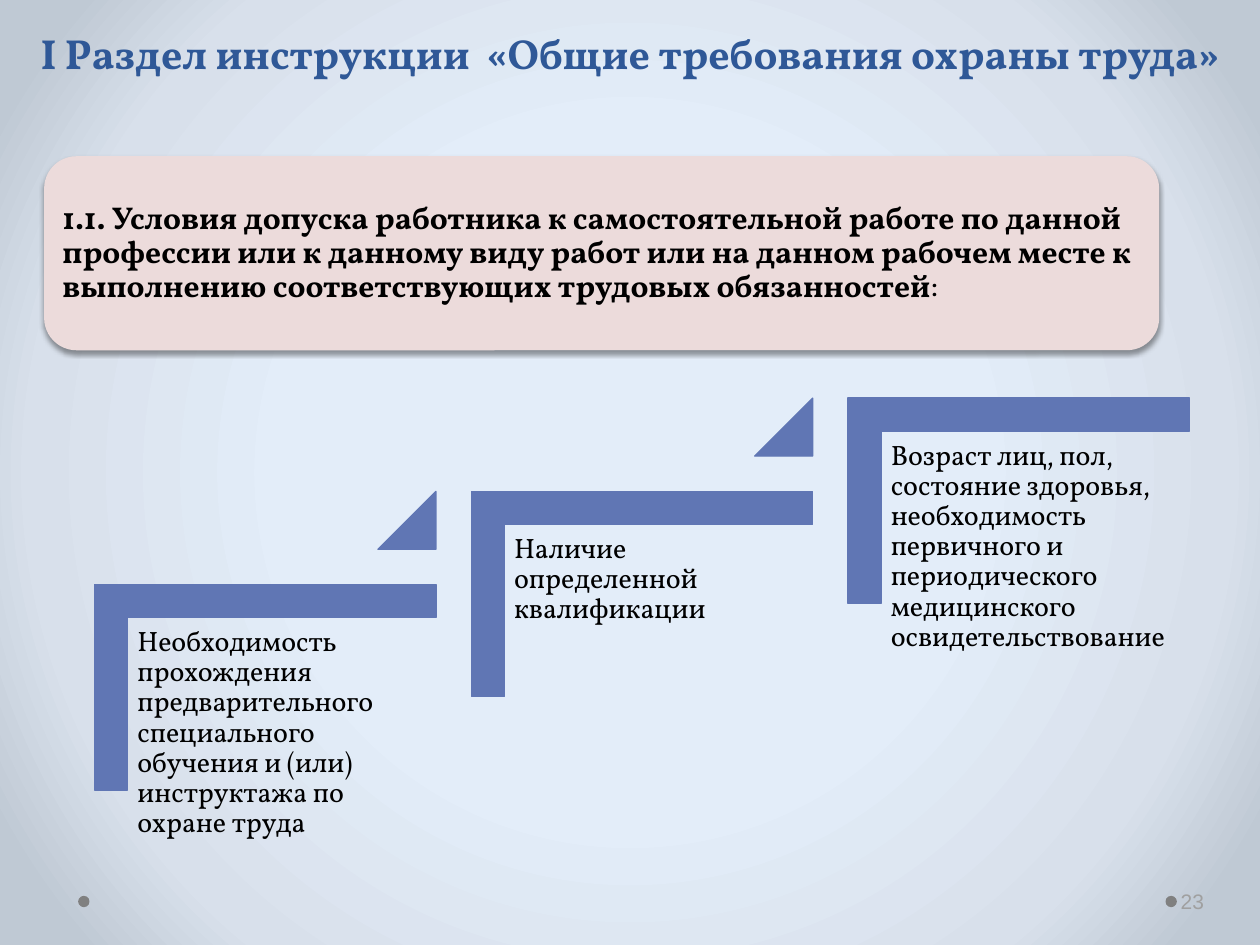
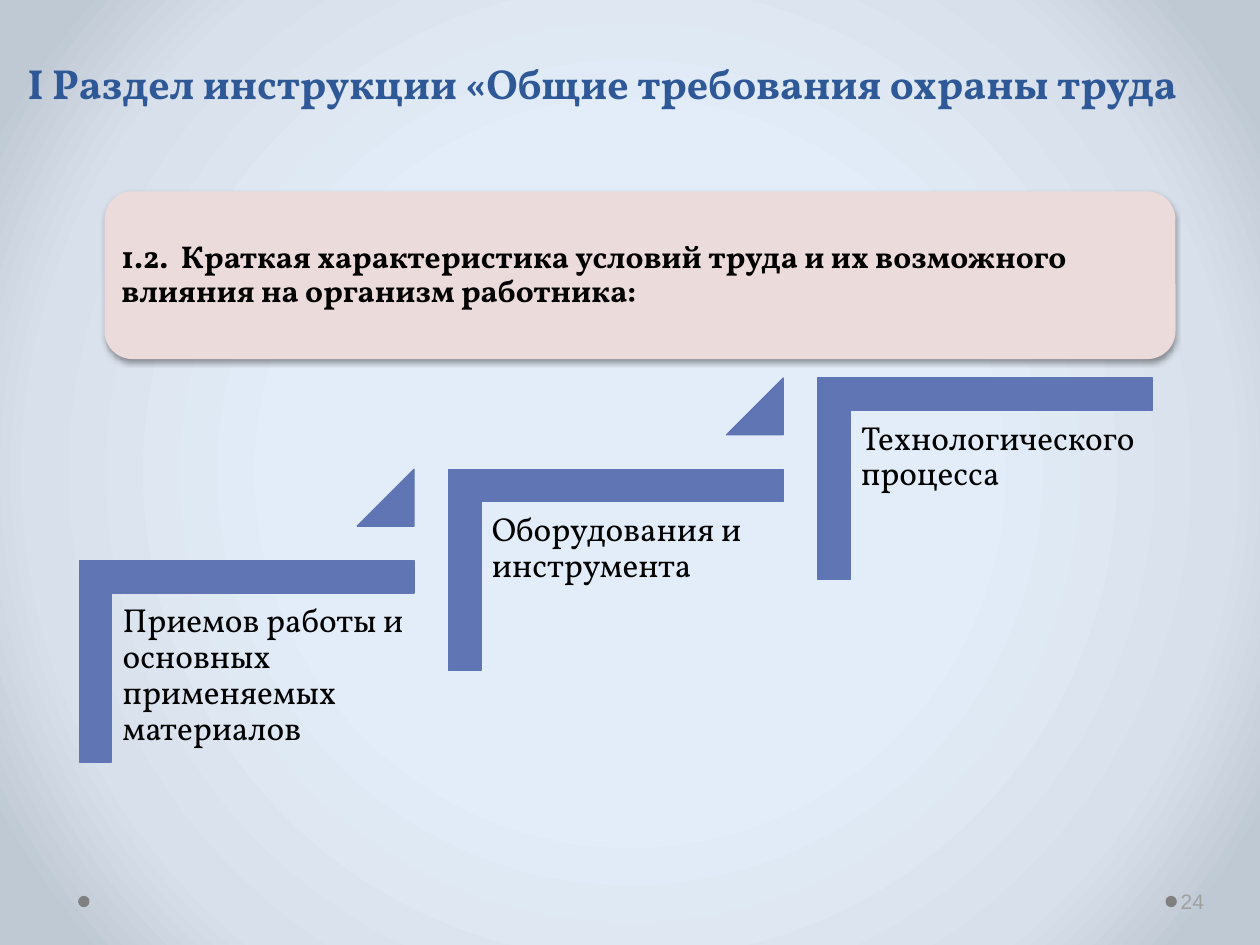
"""Build two slides on the general section of a safety instruction."""
import pptx
import pptx.dml.color
import pptx.enum.shapes
import pptx.enum.text
import pptx.oxml
import pptx.oxml.ns
import pptx.util

Inches, Pt = pptx.util.Inches, pptx.util.Pt
RGBColor = pptx.dml.color.RGBColor
KIND = pptx.enum.shapes.MSO_SHAPE
ALIGN = pptx.enum.text.PP_ALIGN
ANCHOR = pptx.enum.text.MSO_ANCHOR

NAVY = RGBColor(0x2F, 0x58, 0x97)
BLUE = RGBColor(0x60, 0x76, 0xB4)
PINK = RGBColor(0xEC, 0xDB, 0xDB)
BLACK = RGBColor(0, 0, 0)
GREY = RGBColor(0x80, 0x80, 0x80)
PALE = RGBColor(0xA0, 0xA0, 0xA0)
GLOW = [(43, RGBColor(0xE3, 0xED, 0xF9)), (76, RGBColor(0xD8, 0xE0, 0xEB)),
        (92, RGBColor(0xBF, 0xC9, 0xD4))]
FONT = "Vollkorn"
FIRST = 23
DOTS = (0.62, 9.25)

SLIDES = [
    {"title": "I Раздел инструкции  «Общие требования охраны труда»",
     "place": (0, 0.17, 10, 0.5), "align": ALIGN.CENTER,
     "panel": (0.35, 1.24, 8.85, 1.54),
     "head": [("1.1. Условия допуска работника к самостоятельной работе по данной "
               "профессии или к данному виду работ или на данном рабочем месте к "
               "выполнению соответствующих трудовых обязанностей", True), (":", False)],
     "start": (0.75, 4.64), "scale": 1, "size": 16, "inset": 0.07,
     "steps": ["Необходимость прохождения предварительного специального обучения "
               "и (или) инструктажа по охране труда",
               "Наличие определенной квалификации",
               "Возраст лиц, пол, состояние здоровья, необходимость первичного и "
               "периодического медицинского освидетельствование"]},
    {"title": "I Раздел инструкции «Общие требования охраны труда",
     "place": (0.12, 0.41, 9.88, 0.5), "align": ALIGN.LEFT,
     "panel": (0.83, 1.52, 8.5, 1.33),
     "head": [("1.2.  Краткая характеристика условий труда и их возможного "
               "влияния на организм работника:", True)],
     "start": (0.63, 4.45), "scale": 0.98, "size": 19, "inset": 0.08,
     "steps": ["Приемов работы и основных применяемых материалов",
               "Оборудования и инструмента",
               "Технологического процесса"]},
]


def make(text):
    """Parse XML with the usual namespaces."""
    return pptx.oxml.parse_xml(text.replace(" NS", " " + pptx.oxml.ns.nsdecls("p", "a"), 1))


def box(place):
    """Turn inches into lengths."""
    return [Inches(n) for n in place]


def write(shape, runs, size, color, inset, align=ALIGN.LEFT, anchor=ANCHOR.TOP, space=None):
    """Fill a shape with one paragraph of (text, bold) runs."""
    frame = shape.text_frame
    frame.word_wrap = True
    frame.auto_size = pptx.enum.text.MSO_AUTO_SIZE.NONE
    frame.vertical_anchor = anchor
    (frame.margin_left, frame.margin_top,
     frame.margin_right, frame.margin_bottom) = box(inset)
    para = frame.paragraphs[0]
    para.alignment = align
    if space:
        para.line_spacing = space
    for text, bold in runs:
        run = para.add_run()
        run.text = text
        run.font.name, run.font.size, run.font.bold = FONT, Pt(size), bold
        run.font.color.rgb = color


def draw(slide, kind, place, fill, line=False):
    """Add a flat preset shape."""
    shape = slide.shapes.add_shape(kind, *box(place))
    shape.shadow.inherit = False
    shape.fill.solid()
    shape.fill.fore_color.rgb = fill
    if line:
        shape.line.color.rgb = fill
        shape.line.width = Pt(0.75)
    else:
        shape.line.fill.background()
    return shape


def add_panel(slide, data):
    """Add the rounded heading panel with its soft shadow."""
    panel = draw(slide, KIND.ROUNDED_RECTANGLE, data["panel"], PINK)
    effects = panel._element.spPr.find(pptx.oxml.ns.qn("a:effectLst"))
    effects.append(make(
        f'<a:outerShdw NS blurRad="{Pt(3.1)}" dist="{Pt(1.6)}" dir="5400000" '
        'rotWithShape="0"><a:srgbClr val="000000"><a:alpha val="38000"/>'
        '</a:srgbClr></a:outerShdw>'))
    write(panel, data["head"], 18, BLACK, [0.07] * 4, anchor=ANCHOR.MIDDLE, space=0.9)


def add_stairs(slide, data):
    """Add rising steps, with a triangle between neighbours."""
    k = data["scale"]
    wide, high, side = 2.71 * k, 1.63 * k, 0.46 * k
    for i, text in enumerate(data["steps"]):
        x = data["start"][0] + 2.99 * k * i
        y = data["start"][1] - 0.74 * k * i
        turn = (wide - high) / 2
        corner = draw(slide, KIND.CORNER, (x + turn, y - turn, high, wide), BLUE, True)
        corner.rotation = 90
        corner.adjustments[0] = corner.adjustments[1] = 0.161
        label = slide.shapes.add_textbox(
            *box((x + 0.27 * k, y + 0.27 * k, 2.44 * k, 2.14 * k)))
        write(label, [(text, False)], data["size"], BLACK, [data["inset"]] * 4, space=0.9)
        if i < len(data["steps"]) - 1:
            wedge = draw(slide, KIND.ISOSCELES_TRIANGLE,
                         (x + 2.25 * k, y - 0.74 * k, side, side), BLUE, True)
            wedge.adjustments[0] = 1


def add_number(slide, num):
    """Add the slide number field."""
    note = slide.shapes.add_textbox(*box((9.34, 6.95, 0.61, 0.4)))
    write(note, [], 12, PALE, (0.03, 0.05, 0.05, 0.05), anchor=ANCHOR.MIDDLE)
    note.text_frame.paragraphs[0]._p.append(make(
        '<a:fld NS id="{B6F15528-21DE-4FAA-801E-634DDDAF4B2B}" type="slidenum">'
        f'<a:rPr lang="ru-RU" sz="1200"><a:solidFill><a:srgbClr val="{PALE}"/>'
        f'</a:solidFill><a:latin typeface="Arial"/></a:rPr><a:t>{num}</a:t></a:fld>'))


def set_layout(layout, slide):
    """Give the layout its glow and move the footer dots onto it."""
    stops = "".join(f'<a:gs pos="{pos * 1000}"><a:srgbClr val="{color}"/></a:gs>'
                    for pos, color in GLOW)
    layout.element.cSld.insert(0, make(
        f'<p:bg NS><p:bgPr><a:gradFill><a:gsLst>{stops}</a:gsLst><a:path path="circle">'
        '<a:fillToRect l="50000" t="50000" r="50000" b="50000"/></a:path></a:gradFill>'
        '<a:effectLst/></p:bgPr></p:bg>'))
    for x in DOTS:
        dot = draw(slide, KIND.OVAL, (x, 7.11, 0.09, 0.09), GREY)
        layout.shapes.element.append(dot._element)


def main():
    """Build and save the deck."""
    deck = pptx.Presentation()
    deck.slide_width, deck.slide_height = Inches(10), Inches(7.5)
    deck.element.set("firstSlideNum", str(FIRST))
    layout = deck.slide_layouts.get_by_name("Title Only")
    for num, data in enumerate(SLIDES, FIRST):
        slide = deck.slides.add_slide(layout)
        title = slide.shapes.title
        title.left, title.top, title.width, title.height = box(data["place"])
        write(title, [(data["title"], True)], 24, NAVY, (0.1, 0.05, 0.1, 0.05), data["align"])
        add_panel(slide, data)
        add_stairs(slide, data)
        add_number(slide, num)
    set_layout(layout, slide)
    deck.save("out.pptx")


if __name__ == "__main__":
    main()
